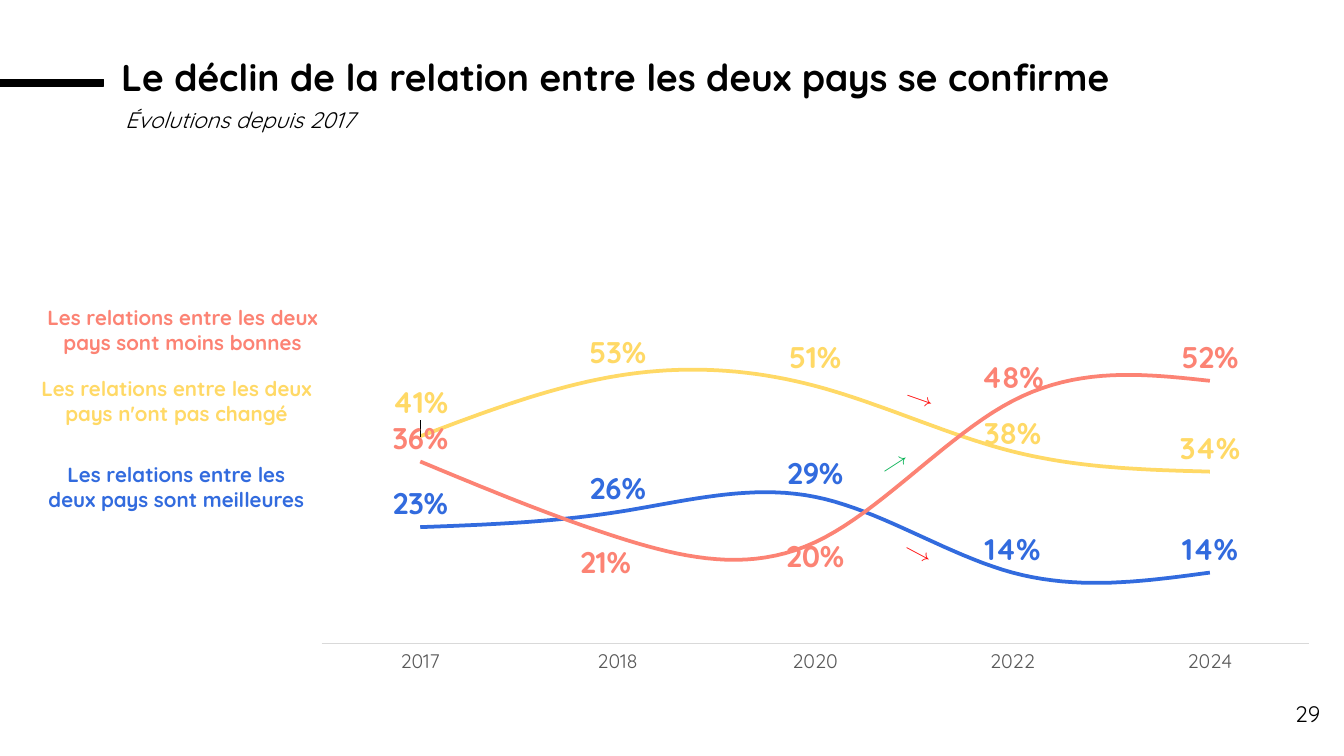
from dataclasses import dataclass

from lxml.etree import SubElement
from pptx import Presentation
from pptx.chart.data import CategoryChartData
from pptx.dml.color import RGBColor
from pptx.enum.chart import XL_CHART_TYPE, XL_LABEL_POSITION, XL_MARKER_STYLE, XL_TICK_MARK
from pptx.enum.shapes import MSO_SHAPE
from pptx.enum.text import MSO_ANCHOR, MSO_AUTO_SIZE, PP_ALIGN
from pptx.oxml import parse_xml
from pptx.oxml.ns import nsdecls, qn
from pptx.util import Cm, Pt


@dataclass(frozen=True)
class Theme:
    """Colours and type sizes of the deck."""

    font: str = "Quicksand"
    black: str = "000000"
    same: str = "FFD966"
    better: str = "326BDE"
    worse: str = "FC8374"
    down: str = "FF0000"
    up: str = "00B050"
    axis_text: str = "595959"
    axis_line: str = "D9D9D9"
    title: float = 20
    value: float = 16
    body: float = 12
    label: float = 11
    axis: float = 10.5
    chart: float = 10


def assign(target, values):
    """Set every attribute in values on the target."""
    for name, value in values.items():
        setattr(target, name, value)


def manual_layout(target, **values):
    """Return a chart layout element with the given settings."""
    layout = parse_xml(f"<c:layout {nsdecls('c')}><c:manualLayout/></c:layout>")
    if target:
        SubElement(layout[0], qn("c:layoutTarget")).set("val", target)
    for name, value in values.items():
        SubElement(layout[0], qn(f"c:{name}")).set("val", str(value))
    return layout


class SlideBuilder:
    """Holds the theme and the slide being filled."""

    def __init__(self, page, theme):
        """Keep the slide and its theme."""
        self.page, self.theme = page, theme

    def style(self, font, size, color, **extra):
        """Format a font with the theme typeface."""
        assign(font, {"name": self.theme.font, "size": Pt(size), **extra})
        font.color.rgb = RGBColor.from_string(color)

    def fill_text(self, box, text, size, color, paragraph=None, frame=None, **extra):
        """Put one formatted paragraph in a shape."""
        assign(box.text_frame, {"word_wrap": True, "auto_size": MSO_AUTO_SIZE.SHAPE_TO_FIT_TEXT,
                                "vertical_anchor": MSO_ANCHOR.TOP, **(frame or {})})
        para = box.text_frame.paragraphs[0]
        assign(para, {"alignment": PP_ALIGN.LEFT, **(paragraph or {})})
        span = para.add_run()
        span.text = text
        self.style(span.font, size, color, **extra)

    def placeholder(self, index, place, text, size, **options):
        """Move and fill a placeholder of the layout."""
        box = self.page.placeholders[index]
        assign(box, dict(zip(("left", "top", "width", "height"), map(Cm, place))))
        properties = box.text_frame.paragraphs[0]._p.get_or_add_pPr()
        properties.set("marL", "0")
        properties.set("indent", "0")
        SubElement(properties, qn("a:buNone"))
        self.fill_text(box, text, size, self.theme.black, **options)

    def text(self, place, text, size, color, rotation=0, **options):
        """Add a text box."""
        box = self.page.shapes.add_textbox(*map(Cm, place))
        box.rotation = rotation
        self.fill_text(box, text, size, color, **options)

    def bar(self, place):
        """Add the solid bar beside the title."""
        bar = self.page.shapes.add_shape(MSO_SHAPE.RECTANGLE, *map(Cm, place))
        black = RGBColor.from_string(self.theme.black)
        bar.shadow.inherit = False
        bar.fill.solid()
        bar.fill.fore_color.rgb = black
        bar.line.color.rgb = black
        bar.line.width = Pt(0.75)

    def line_chart(self, place, years, lines):
        """Add the smoothed line chart with its value labels."""
        data = CategoryChartData(number_format="0%")
        data.categories = years
        for name, _, values, _ in lines:
            data.add_series(name, values)
        chart = self.page.shapes.add_chart(XL_CHART_TYPE.LINE, *map(Cm, place), data).chart
        assign(chart, {"has_legend": False, "has_title": False})
        self.style(chart.font, self.theme.chart, self.theme.black)
        assign(chart.value_axis, {"visible": False, "has_major_gridlines": False,
                                  "minimum_scale": 0, "maximum_scale": 1})
        axis = chart.category_axis
        assign(axis, {"major_tick_mark": XL_TICK_MARK.NONE, "minor_tick_mark": XL_TICK_MARK.NONE})
        self.style(axis.tick_labels.font, self.theme.axis, self.theme.axis_text)
        axis.format.line.color.rgb = RGBColor.from_string(self.theme.axis_line)
        axis.format.line.width = Pt(0.75)
        plot_area = chart.element.xpath("c:chart/c:plotArea")[0]
        for layout in plot_area.xpath("c:layout"):
            plot_area.remove(layout)
        plot_area.insert(0, manual_layout("inner", xMode="edge", yMode="edge",
                                          x=0.18, y=0, w=0.8, h=0.93))
        chart.plots[0].vary_by_categories = False
        for series, (_, color, _, shifts) in zip(chart.plots[0].series, lines):
            self.line(series, color, shifts)

    def line(self, series, color, shifts):
        """Format one line and move the labels that need it."""
        series.smooth = True
        series.marker.style = XL_MARKER_STYLE.NONE
        series.format.line.color.rgb = RGBColor.from_string(color)
        series.format.line.width = Pt(2)
        labels = series.data_labels
        assign(labels, {"show_value": True, "number_format": "0%",
                        "number_format_is_linked": False, "position": XL_LABEL_POSITION.ABOVE})
        self.style(labels.font, self.theme.value, color, bold=True)
        for index, (x, y) in shifts.items():
            label = series.points[index].data_label
            self.style(label.font, self.theme.value, color, bold=True)
            label.position = XL_LABEL_POSITION.ABOVE
            element = labels._element.xpath(f"c:dLbl[c:idx/@val='{index}']")[0]
            element.insert(1, manual_layout(None, x=x, y=y))


def main():
    """Build and save the deck."""
    theme = Theme()
    deck = Presentation()
    deck.slide_width, deck.slide_height = Cm(25.4), Cm(14.29)
    slide = SlideBuilder(deck.slides.add_slide(deck.slide_layouts[1]), theme)
    centred = {"alignment": PP_ALIGN.CENTER}
    flush = dict.fromkeys(("margin_left", "margin_top", "margin_right", "margin_bottom"), 0)

    slide.placeholder(0, (2.29, 1.17, 23.06, 0.69),
                      "Le déclin de la relation entre les deux pays se confirme", theme.title,
                      bold=True, paragraph={"line_spacing": 0.8},
                      frame={"vertical_anchor": MSO_ANCHOR.BOTTOM, **flush})
    slide.placeholder(1, (2.11, 1.88, 8.74, 0.76), "Évolutions depuis 2017", theme.body,
                      italic=True, paragraph={"space_before": Pt(0)})
    slide.bar((0, 1.5, 1.96, 0.13))
    slide.line_chart((1.88, 2.62, 23.32, 10.26), ("2017", "2018", "2020", "2022", "2024"), (
        ("Pas changé", theme.same, (0.41, 0.53, 0.51, 0.38, 0.34),
         {0: (0, -0.02), 2: (0, -0.01), 3: (0, 0.01)}),
        ("Meilleures", theme.better, (0.23, 0.26, 0.29, 0.14, 0.14), {}),
        ("Moins bonnes", theme.worse, (0.36, 0.21, 0.2, 0.48, 0.52),
         {1: (-0.01, 0.09), 2: (0, 0.07)}),
    ))
    for place, ending, color in (
        ((0.33, 5.64, 6.25, 1.19), "sont moins bonnes", theme.worse),
        ((0.33, 6.98, 6.02, 1.19), "n'ont pas changé", theme.same),
        ((0.58, 8.61, 5.51, 1.19), "sont meilleures", theme.better),
    ):
        slide.text(place, f"Les relations entre les deux pays {ending}", theme.label, color,
                   paragraph=centred, bold=True)
    for place, arrow, color, rotation in (
        ((16.89, 7.04, 1.42, 0.74), "↘", theme.down, 334.2),
        ((16.48, 8.41, 1.07, 0.74), "↗", theme.up, 12.1),
        ((16.89, 10.06, 0.99, 0.74), "↘", theme.down, 343),
    ):
        slide.text(place, arrow, theme.label, color, rotation)
    slide.text((23.52, 13.11, 1.68, 0.76), "29", theme.body, theme.black,
               paragraph={"alignment": PP_ALIGN.RIGHT},
               frame={"vertical_anchor": MSO_ANCHOR.MIDDLE})
    deck.save("out.pptx")


if __name__ == "__main__":
    main()
